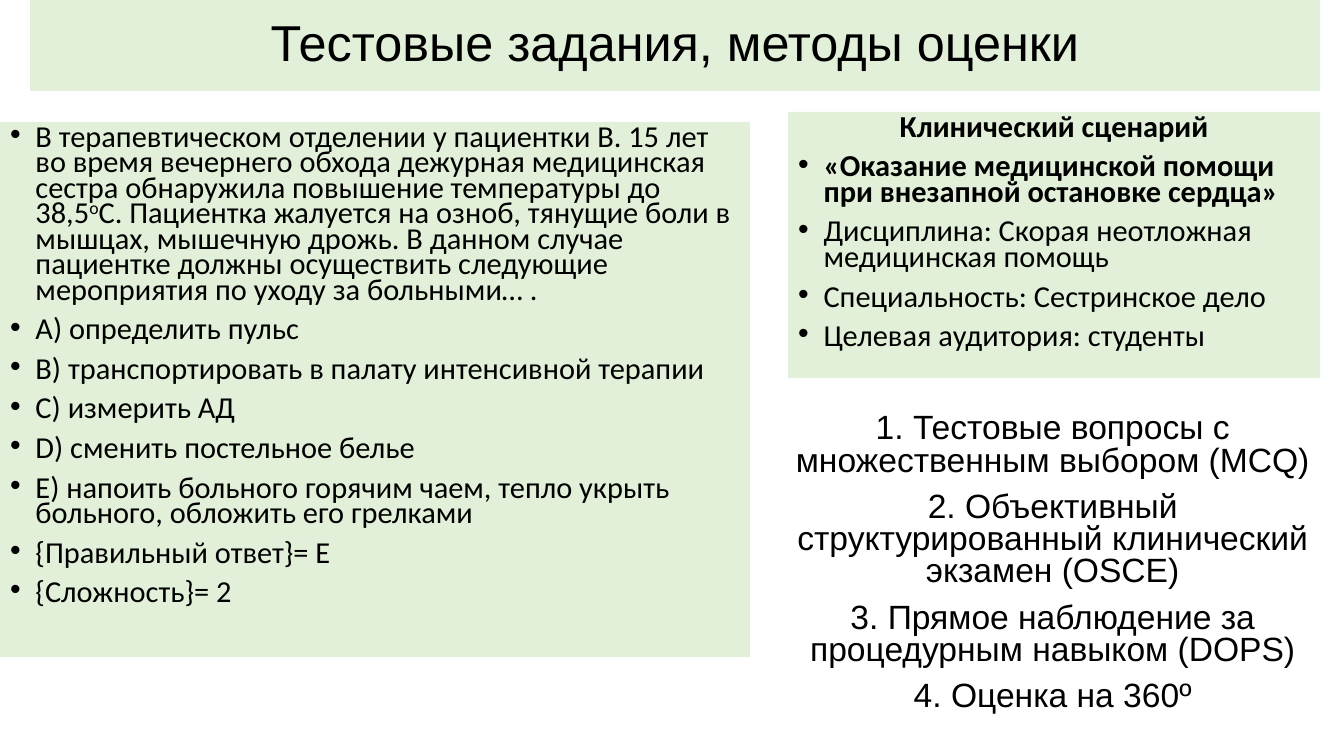
"""Build a slide on test tasks and assessment methods."""
from dataclasses import dataclass

from lxml.etree import SubElement
from pptx import Presentation
from pptx.dml.color import RGBColor
from pptx.enum.text import MSO_ANCHOR, MSO_AUTO_SIZE, PP_ALIGN
from pptx.oxml.ns import qn
from pptx.util import Cm, Pt

TITLE = "Тестовые задания, методы оценки"
QUESTION = [
    [
        "В терапевтическом отделении у пациентки В. 15 лет во время вечернего обхода "
        "дежурная медицинская сестра обнаружила повышение температуры до 38,5",
        "о",
        "С. Пациентка жалуется на озноб, тянущие боли в мышцах, мышечную дрожь. "
        "В данном случае пациентке должны осуществить следующие мероприятия "
        "по уходу за больными… .",
    ],
    ["A) определить пульс"],
    ["B) транспортировать в палату интенсивной терапии"],
    ["C) измерить АД"],
    ["D) сменить постельное белье"],
    ["E) напоить больного горячим чаем, тепло укрыть больного, обложить его грелками"],
    ["{Правильный ответ}= E"],
    ["{Сложность}= 2"],
]
SCENARIO = [
    ["Клинический сценарий"],
    ["«Оказание медицинской помощи при внезапной остановке сердца»"],
    ["Дисциплина: Скорая неотложная медицинская помощь"],
    ["Специальность: Сестринское дело"],
    ["Целевая аудитория: студенты"],
]
METHODS = [
    ["1. Тестовые вопросы с множественным выбором (MCQ)"],
    ["2. Объективный структурированный клинический экзамен (OSCE)"],
    ["3. Прямое наблюдение за процедурным навыком (DOPS)"],
    ["4. Оценка на 360º"],
]
PLACES = {
    "title": (0.76, 0, 32.51, 2.29),
    "question": (0, 3.07, 18.9, 13.49),
    "scenario": (19.86, 2.82, 13.41, 6.71),
    "methods": (19.56, 10.31, 13.94, 8.59),
}


@dataclass(frozen=True)
class Theme:
    panel: RGBColor = RGBColor(0xE2, 0xF0, 0xD9)
    ink: RGBColor = RGBColor(0, 0, 0)
    heading_font: str = "Arial"
    body_font: str = "Calibri"
    title_size: Pt = Pt(36)
    body_size: Pt = Pt(21.7)
    methods_size: Pt = Pt(24)
    gap: Pt = Pt(10)
    hanging: Cm = Cm(0.64)


THEME = Theme()


def place(box, name, filled=True):
    box.left, box.top, box.width, box.height = map(Cm, PLACES[name])
    box.text_frame.word_wrap = True
    box.text_frame.auto_size = MSO_AUTO_SIZE.NONE
    if filled:
        box.fill.solid()
        box.fill.fore_color.rgb = THEME.panel


def style(span, font, size, bold=False):
    span.font.name, span.font.size, span.font.bold = font, size, bold
    span.font.color.rgb = THEME.ink


def write(box, rows, font, size, spacing, centred=(), bold=()):
    frame = box.text_frame
    for index, parts in enumerate(rows):
        para = frame.add_paragraph() if index else frame.paragraphs[0]
        para.line_spacing, para.space_before = spacing, THEME.gap
        is_centred = index in centred
        para.alignment = PP_ALIGN.CENTER if is_centred else PP_ALIGN.LEFT
        hanging = 0 if is_centred else THEME.hanging
        properties = para._p.get_or_add_pPr()
        properties.set("marL", str(hanging))
        properties.set("indent", str(-hanging))
        if is_centred:
            SubElement(properties, qn("a:buNone"))
        for order, text in enumerate(parts):
            span = para.add_run()
            span.text = text
            style(span, font, size, index in bold)
            if order == 1:
                span._r.get_or_add_rPr().set("baseline", "30000")


def main():
    deck = Presentation()
    deck.slide_width, deck.slide_height = Cm(33.87), Cm(19.05)
    page = deck.slides.add_slide(deck.slide_layouts.get_by_name("Two Content"))
    title, question, scenario = list(page.placeholders)[:3]

    place(title, "title")
    title.text_frame.text = TITLE
    title.text_frame.vertical_anchor = MSO_ANCHOR.MIDDLE
    para = title.text_frame.paragraphs[0]
    para.alignment, para.line_spacing = PP_ALIGN.CENTER, 0.9
    style(para.runs[0], THEME.heading_font, THEME.title_size)

    place(question, "question")
    write(question, QUESTION, THEME.body_font, THEME.body_size, 0.7)
    place(scenario, "scenario")
    write(scenario, SCENARIO, THEME.body_font, THEME.body_size, 0.7, centred=(0,), bold=(0, 1))

    methods = page.shapes.add_textbox(0, 0, 0, 0)
    place(methods, "methods", filled=False)
    write(methods, METHODS, THEME.heading_font, THEME.methods_size, 0.8, range(len(METHODS)))
    deck.save("out.pptx")


if __name__ == "__main__":
    main()
